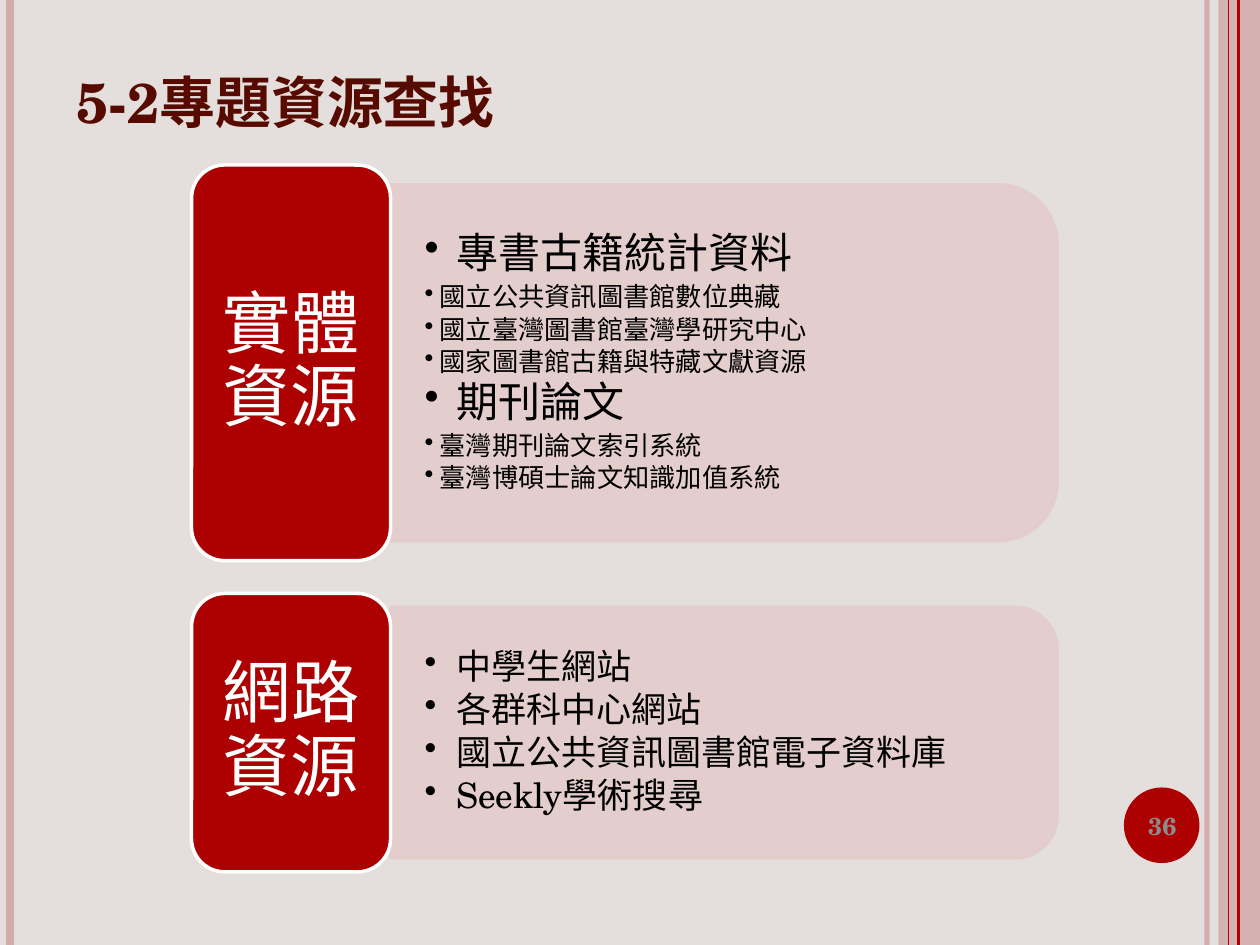
"""Builds the slide on finding physical and online resources for a project."""
from lxml import etree
from pptx import Presentation
from pptx.dml.color import RGBColor
from pptx.enum.shapes import MSO_CONNECTOR, MSO_SHAPE
from pptx.enum.text import MSO_ANCHOR, PP_ALIGN
from pptx.oxml.ns import qn
from pptx.util import Inches, Pt

STRAIGHT = MSO_CONNECTOR.STRAIGHT
RECT, OVAL = MSO_SHAPE.RECTANGLE, MSO_SHAPE.OVAL
ROUNDED, ROUNDED_TOP = MSO_SHAPE.ROUNDED_RECTANGLE, MSO_SHAPE.ROUND_2_SAME_RECTANGLE
MIDDLE = MSO_ANCHOR.MIDDLE
LEFT, CENTER = PP_ALIGN.LEFT, PP_ALIGN.CENTER

FONT = "TeX Gyre Schola"
COLORS = {
    "background": "E4DFDC", "title": "560A00", "red": "AD0101", "stripe": "D3ABAB",
    "panel": "E3CCCC", "white": "FFFFFF", "black": "000000", "number": "8C8C8C",
}
STRIPES = [(9.58, "stripe", 3, 93), (0.08, "stripe", 4.5, 100),
           (9.83, "red", 1.5, 100), (9.75, "red", 0.75, 100)]

LABEL_LEFT, LABEL_WIDTH, PANEL_WIDTH = 1.52, 1.58, 5.29
PANEL_RATIO = 0.9
HEADING, DETAIL, SITE = (24, 0.25), (15, 0.12), (20, 0.25)
GROUPS = [
    ("實體資源", 1.31, 3.14, [
        ("專書古籍統計資料", HEADING),
        ("國立公共資訊圖書館數位典藏", DETAIL),
        ("國立臺灣圖書館臺灣學研究中心", DETAIL),
        ("國家圖書館古籍與特藏文獻資源", DETAIL),
        ("期刊論文", HEADING),
        ("臺灣期刊論文索引系統", DETAIL),
        ("臺灣博碩士論文知識加值系統", DETAIL),
    ]),
    ("網路資源", 4.71, 2.21, [
        ("中學生網站", SITE),
        ("各群科中心網站", SITE),
        ("國立公共資訊圖書館電子資料庫", SITE),
        ("Seekly學術搜尋", SITE),
    ]),
]


def rgb(name):
    return RGBColor.from_string(COLORS[name])


def set_opacity(element, percent):
    if percent < 100:
        for color in element.iter(qn("a:srgbClr")):
            etree.SubElement(color, qn("a:alpha"), val=str(percent * 1000))


def add_stripe(slide, x, color, width, opacity):
    stripe = slide.shapes.add_connector(STRAIGHT, Inches(x), 0, Inches(x), Inches(7.5))
    stripe.line.color.rgb = rgb(color)
    stripe.line.width = Pt(width)
    properties = stripe._element.spPr
    set_opacity(properties, opacity)
    etree.SubElement(properties, qn("a:effectLst"))


def add_block(slide, kind, box, fill, outline=None, opacity=100):
    block = slide.shapes.add_shape(kind, *map(Inches, box))
    block.shadow.inherit = False
    block.fill.solid()
    block.fill.fore_color.rgb = rgb(fill)
    if outline:
        block.line.color.rgb = rgb(outline)
        block.line.width = Pt(2)
    else:
        block.line.fill.background()
    set_opacity(block._element.spPr, opacity)
    return block


def set_frame(frame, side=0.1, end=0.05):
    frame.word_wrap = True
    frame.vertical_anchor = MIDDLE
    frame.margin_left = frame.margin_right = Inches(side)
    frame.margin_top = frame.margin_bottom = Inches(end)


def write(paragraph, text, size, color, align=LEFT, bold=False):
    paragraph.text = text
    paragraph.alignment = align
    font = paragraph.font
    font.name, font.size, font.bold = FONT, Pt(size), bold
    font.color.rgb = rgb(color)


def add_bullet(paragraph, indent):
    properties = paragraph._p.get_or_add_pPr()
    properties.set("marL", str(Inches(indent)))
    properties.set("indent", str(-Inches(indent)))
    bullet = etree.Element(qn("a:buChar"), char="•")
    properties.find(qn("a:defRPr")).addprevious(bullet)


def add_text_box(slide, box, side=0.1, end=0.05):
    frame = slide.shapes.add_textbox(*map(Inches, box)).text_frame
    set_frame(frame, side, end)
    return frame


def add_panel(slide, left, top, height):
    across = left + (PANEL_WIDTH - height) / 2
    down = top + (height - PANEL_WIDTH) / 2
    panel = add_block(slide, ROUNDED_TOP, (across, down, height, PANEL_WIDTH),
                      "panel", "panel", 90)
    panel.rotation = 90


def add_group(slide, name, top, height, items):
    panel_left = LABEL_LEFT + LABEL_WIDTH
    panel_height = height * PANEL_RATIO
    panel_top = top + (height - panel_height) / 2
    add_panel(slide, panel_left, panel_top, panel_height)

    details = add_text_box(slide, (panel_left, panel_top, 5.17, panel_height), 0.27, 0.14)
    for position, (text, (size, indent)) in enumerate(items):
        entry = details.add_paragraph() if position else details.paragraphs[0]
        write(entry, text, size, "black")
        entry.level = 1
        entry.line_spacing = 0.9
        entry.space_after = Pt(size * 0.15)
        add_bullet(entry, indent)

    label = add_block(slide, ROUNDED, (LABEL_LEFT, top, LABEL_WIDTH, height), "red", "white")
    set_frame(label.text_frame, 0.15, 0.08)
    caption = label.text_frame.paragraphs[0]
    write(caption, name, 39, "white", CENTER)
    caption.line_spacing = 0.9
    caption.space_after = Pt(39 * 0.35)


def set_title(slide, text):
    title = slide.shapes.title
    title.left, title.top, title.width, title.height = map(Inches, (0.51, 0.13, 8.17, 1.25))
    set_frame(title.text_frame)
    heading = title.text_frame.paragraphs[0]
    write(heading, text, 40, "title", bold=True)
    heading.runs[0].font._element.set("cap", "small")


def add_page_number(slide, number):
    add_block(slide, OVAL, (8.92, 6.25, 0.6, 0.6), "red")
    frame = add_text_box(slide, (8.89, 6.27, 0.67, 0.57))
    write(frame.paragraphs[0], number, 14, "number", CENTER, bold=True)


def main():
    presentation = Presentation()
    presentation.slide_width, presentation.slide_height = Inches(10), Inches(7.5)
    slide = presentation.slides.add_slide(presentation.slide_layouts[5])
    slide.background.fill.solid()
    slide.background.fill.fore_color.rgb = rgb("background")

    add_block(slide, RECT, (9.67, 0, 0.33, 7.5), "stripe", opacity=87)
    for stripe in STRIPES:
        add_stripe(slide, *stripe)
    set_title(slide, "5-2專題資源查找")
    for group in GROUPS:
        add_group(slide, *group)
    add_page_number(slide, "36")
    presentation.save("out.pptx")


if __name__ == "__main__":
    main()
